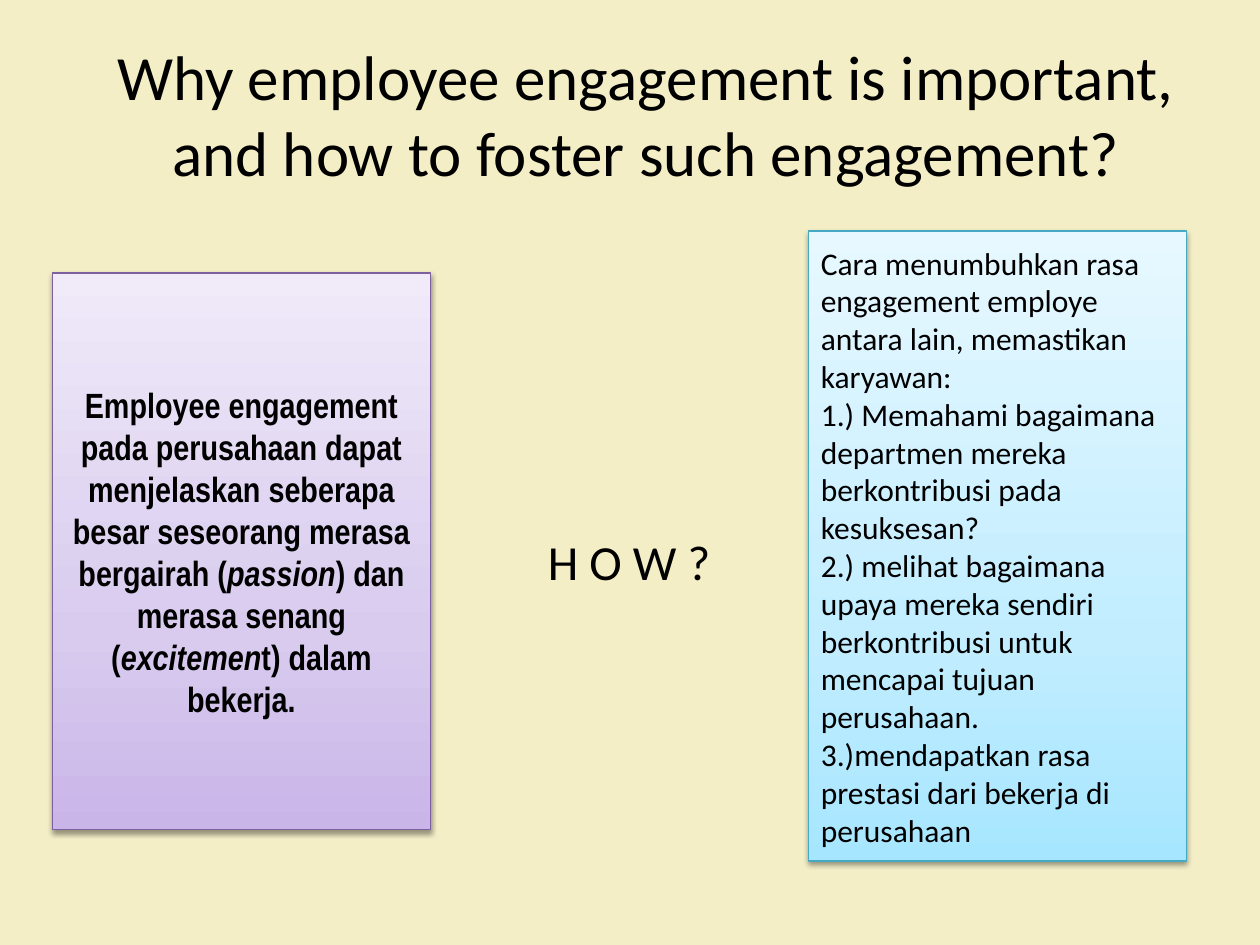
from copy import deepcopy
from lxml.etree import SubElement
from pptx import Presentation
from pptx.dml.color import RGBColor as Rgb
from pptx.enum.shapes import MSO_SHAPE as Kind
from pptx.enum.text import MSO_ANCHOR as Anchor, MSO_AUTO_SIZE as Fit, PP_ALIGN as Align
from pptx.oxml.ns import qn
from pptx.util import Inches, Pt

WIDE, HIGH = Inches(10), Inches(7.5)
COLS, ROWS = 120, 90
INK = {
    "back": "F4EEC7",
    "text": "000000",
    "why": ("C9B5E8", "D8CBEE", "F0EAF9"),
    "why_edge": "7D60A0",
    "how": ("A7E6FF", "C1EDFF", "E7F8FF"),
    "how_edge": "46AAC5",
}
STOPS = (0, 0.35, 1)

TITLE = [[("Why employee engagement is important, and how to foster such engagement?", False)]]
WHY = [[
    ("Employee engagement pada perusahaan dapat menjelaskan seberapa besar seseorang merasa bergairah (", False),
    ("passion", True),
    (") dan merasa senang (", False),
    ("excitemen", True),
    ("t) dalam bekerja.", False),
]]
ASK = [[("H O W ?", False)]]
HOW = [[(line, False)] for line in (
    "Cara menumbuhkan rasa engagement employe antara lain, memastikan karyawan:",
    "1.) Memahami bagaimana departmen mereka berkontribusi pada kesuksesan?",
    "2.) melihat bagaimana upaya mereka sendiri berkontribusi untuk mencapai tujuan perusahaan.",
    "3.)mendapatkan rasa prestasi dari bekerja di perusahaan",
)]


def place(col, row, cols, rows):
    return [int(n) for n in (WIDE * col / COLS, HIGH * row / ROWS,
                             WIDE * cols / COLS, HIGH * rows / ROWS)]


def write(frame, paras, size, face="Calibri", align=Align.LEFT, bold=False):
    frame.word_wrap = True
    for i, parts in enumerate(paras):
        para = frame.paragraphs[0] if i == 0 else frame.add_paragraph()
        para.alignment = align
        for text, slant in parts:
            run = para.add_run()
            run.text = text
            font = run.font
            font.name, font.size = face, Pt(size)
            font.bold, font.italic = bold, slant
            font.color.rgb = Rgb.from_string(INK["text"])


def add_label(slide, area, paras, size, align=Align.LEFT):
    frame = slide.shapes.add_textbox(*place(*area)).text_frame
    write(frame, paras, size, align=align)
    frame.auto_size = Fit.SHAPE_TO_FIT_TEXT


def blend(shape, tones):
    fill = shape.fill
    fill.gradient()
    fill.gradient_angle = 90
    stops = shape.element.spPr.find(".//" + qn("a:gsLst"))
    stops.append(deepcopy(stops[-1]))
    for stop, spot, tone in zip(fill.gradient_stops, STOPS, tones):
        stop.position = spot
        stop.color.rgb = Rgb.from_string(tone)


def shade(shape):
    shape.shadow.inherit = False
    group = shape.element.spPr.find(qn("a:effectLst"))
    cast = SubElement(group, qn("a:outerShdw"), blurRad="40000", dist="20000",
                      dir="5400000", rotWithShape="0")
    tone = SubElement(cast, qn("a:srgbClr"), val=INK["text"])
    SubElement(tone, qn("a:alpha"), val="38000")


def add_card(slide, area, name, paras, size, **style):
    card = slide.shapes.add_shape(Kind.RECTANGLE, *place(*area))
    blend(card, INK[name])
    card.line.color.rgb = Rgb.from_string(INK[name + "_edge"])
    card.line.width = Pt(0.75)
    shade(card)
    card.text_frame.vertical_anchor = Anchor.MIDDLE
    write(card.text_frame, paras, size, **style)


def main():
    deck = Presentation()
    deck.slide_width, deck.slide_height = WIDE, HIGH
    slide = deck.slides.add_slide(deck.slide_layouts[6])
    back = slide.background.fill
    back.solid()
    back.fore_color.rgb = Rgb.from_string(INK["back"])
    add_label(slide, (9, 3, 105, 15.75), TITLE, 36, Align.CENTER)
    add_card(slide, (5, 26, 36, 53), "why", WHY, 20,
             face="Arial Narrow", align=Align.CENTER, bold=True)
    add_label(slide, (51, 50, 25, 6.87), ASK, 28)
    add_card(slide, (77, 22, 36, 60), "how", HOW, 18)
    deck.save("out.pptx")


if __name__ == "__main__":
    main()
